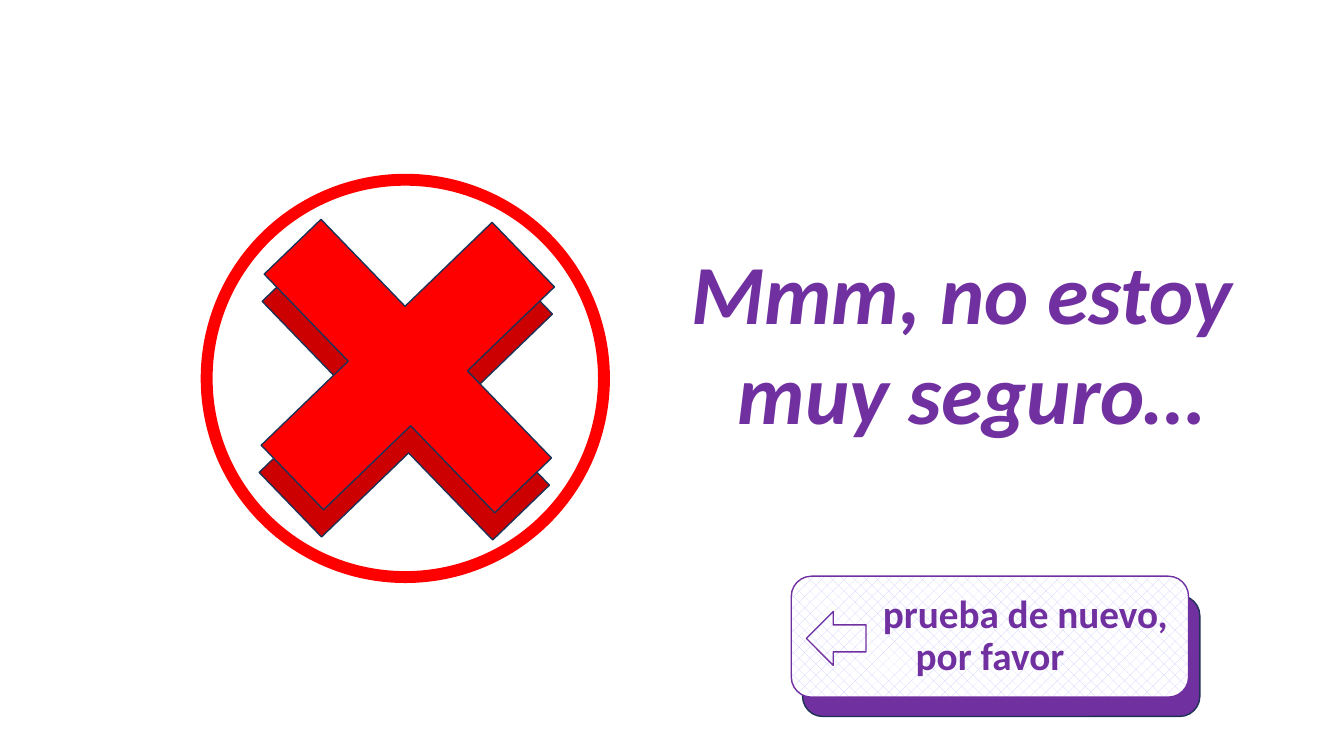
import pptx
import pptx.dml.color
import pptx.enum.dml
import pptx.enum.shapes
import pptx.enum.text
import pptx.util

KINDS = pptx.enum.shapes.MSO_SHAPE
ALIGN = pptx.enum.text.PP_ALIGN
MIDDLE = pptx.enum.text.MSO_ANCHOR.MIDDLE
PURPLE, RED, DARK, NAVY = "7030A0", "FF0000", "CC0000", "1E3256"
LILAC, WHITE = "CCCCFF", "FFFFFF"


def tint(code):
    return pptx.dml.color.RGBColor.from_string(code)


class Page:
    """Draws styled elements on one slide over a grid of 80 columns and 45 rows."""

    cols, rows = 80, 45
    face = {"name": "Calibri", "bold": True}

    def __init__(self, deck):
        self.slide = deck.slides.add_slide(deck.slide_layouts[6])
        self.col = deck.slide_width / self.cols
        self.row = deck.slide_height / self.rows

    def place(self, box):
        left, top, width, height = box
        return [int(n) for n in (left * self.col, top * self.row,
                                 width * self.col, height * self.row)]

    def shape(self, kind, box, line, fill=None, weight=1, turn=0, bend=None):
        item = self.slide.shapes.add_shape(kind, *self.place(box))
        item.shadow.inherit = False
        item.rotation = turn
        if bend is not None:
            item.adjustments[0] = bend
        if fill:
            item.fill.solid()
            item.fill.fore_color.rgb = tint(fill)
        else:
            item.fill.background()
        item.line.color.rgb = tint(line)
        item.line.width = pptx.util.Pt(weight)
        return item

    def hatch(self, item, front, back):
        item.fill.patterned()
        item.fill.pattern = pptx.enum.dml.MSO_PATTERN.PERCENT_25
        item.fill.fore_color.rgb = tint(front)
        item.fill.back_color.rgb = tint(back)

    def letter(self, frame, lines, size, ink, space=1.0, **extra):
        for spot, (words, indent) in enumerate(lines):
            para = frame.add_paragraph() if spot else frame.paragraphs[0]
            para.alignment = ALIGN.CENTER
            para.line_spacing = space
            if indent:
                props = para._p.get_or_add_pPr()
                props.set("marL", "0")
                props.set("indent", str(int(indent * self.col)))
            run = para.add_run()
            run.text = words
            style = {**self.face, "size": pptx.util.Pt(size), **extra}
            for key, value in style.items():
                setattr(run.font, key, value)
            run.font.color.rgb = tint(ink)

    def title(self, box, lines, size, ink):
        frame = self.slide.shapes.add_textbox(*self.place(box)).text_frame
        frame.word_wrap = False
        self.letter(frame, lines, size, ink, italic=True)

    def label(self, item, lines, size, ink):
        frame = item.text_frame
        frame.word_wrap = True
        frame.vertical_anchor = MIDDLE
        self.letter(frame, lines, size, ink, space=0.9)


def main():
    deck = pptx.Presentation()
    deck.slide_width = pptx.util.Inches(13.33)
    deck.slide_height = pptx.util.Inches(7.5)
    page = Page(deck)

    page.title((40.5, 14, 33.5, 12.7),
               [("Mmm, no estoy", 0), ("muy seguro…", 1.14)], 60, PURPLE)
    page.shape(KINDS.FLOWCHART_CONNECTOR, (12.3, 10.7, 23.65, 23.65),
               RED, weight=8.5)
    for left, top, fill in ((14.28, 13.86, DARK), (14.4, 12.24, RED)):
        page.shape(KINDS.CROSS, (left, top, 19.75, 19.1), NAVY, fill,
                   turn=46, bend=0.377)

    page.shape(KINDS.ROUNDED_RECTANGLE, (47.77, 35.45, 23.65, 7.2),
               NAVY, PURPLE)
    button = page.shape(KINDS.ROUNDED_RECTANGLE, (47.1, 34.3, 23.65, 7.2),
                        PURPLE)
    page.hatch(button, LILAC, WHITE)
    page.label(button, [("prueba de nuevo, por favor", 4.2)], 28, PURPLE)
    page.shape(KINDS.LEFT_ARROW, (48, 36.4, 3.55, 3.2), PURPLE)
    deck.save("out.pptx")


if __name__ == "__main__":
    main()
